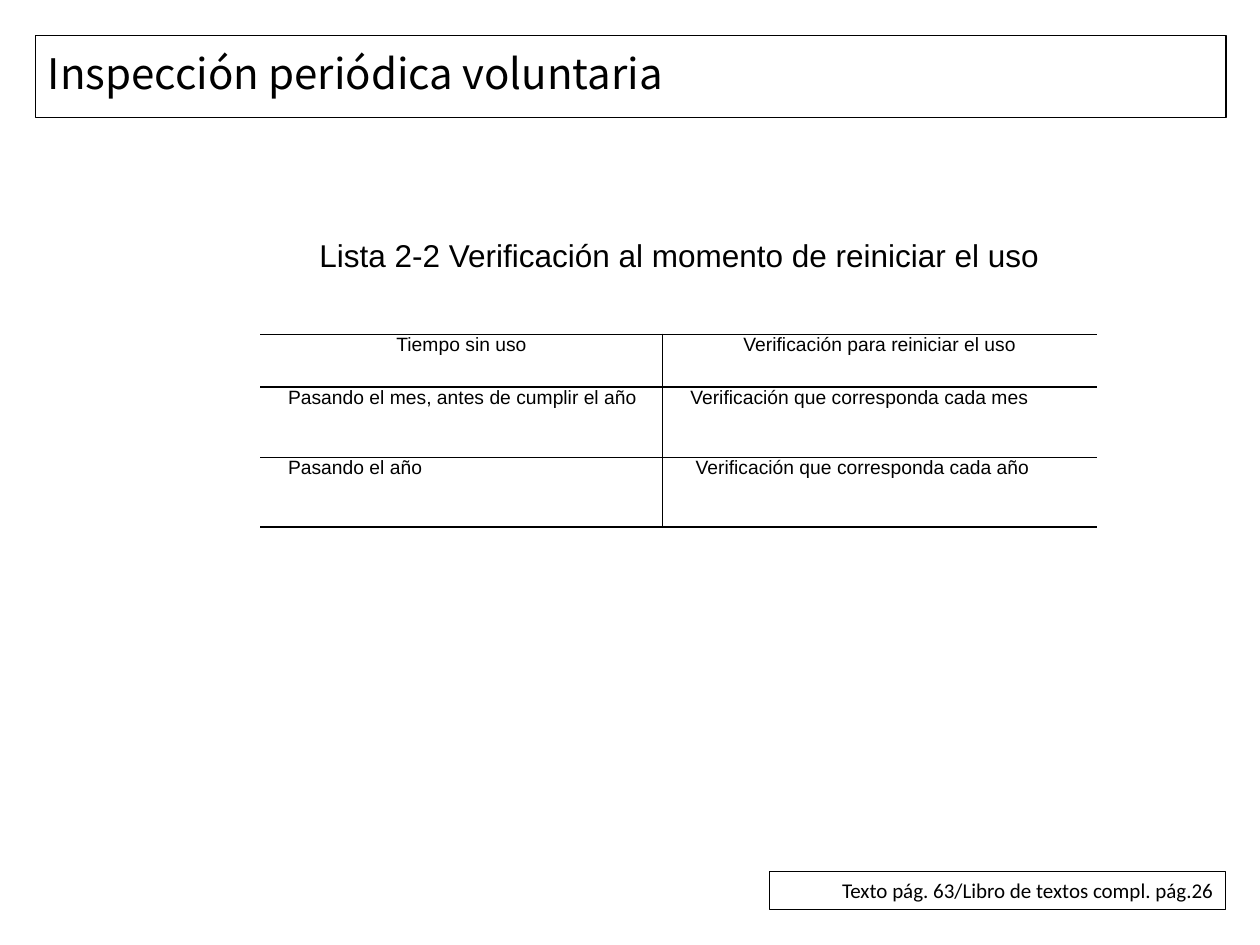
from lxml.etree import SubElement as Sub
from pptx import Presentation
from pptx.dml.color import RGBColor as Rgb
from pptx.enum.shapes import MSO_SHAPE as Shape
from pptx.enum.text import MSO_ANCHOR as Anchor, PP_ALIGN as Align
from pptx.oxml.ns import qn
from pptx.util import Pt

HUES = {"ink": "000000", "page": "FFFFFF"}
CELL = {"name": "Arial", "size": Pt(11)}
ROWS = [
    ("Tiempo sin uso", "Verificación para reiniciar el uso"),
    ("Pasando el mes, antes de cumplir el año", "Verificación que corresponda cada mes"),
    ("Pasando el año", "Verificación que corresponda cada año"),
]
INDENTS = [(0, 0), (10.8, 10.8), (10.8, 13.8)]


def style(item, form):
    for key, value in form.items():
        setattr(item, key, value)


def write(frame, text, font, align=Align.LEFT):
    para = frame.paragraphs[0]
    para.alignment = align
    run = para.add_run()
    run.text = text
    style(run.font, font)
    run.font.color.rgb = Rgb.from_string(HUES["ink"])
    return para


def add_box(slide, box, text, font, align, anchor):
    rect = slide.shapes.add_shape(Shape.RECTANGLE, *map(Pt, box))
    rect.shadow.inherit = False
    rect.fill.background()
    rect.line.color.rgb = Rgb.from_string(HUES["ink"])
    rect.line.width = Pt(0.75)
    style(rect.text_frame, {"word_wrap": True, "vertical_anchor": anchor})
    return write(rect.text_frame, text, font, align)


def add_title(slide, box):
    font = {"name": "Noto Sans CJK JP", "size": Pt(24)}
    para = add_box(slide, box, "Inspección periódica voluntaria", font,
                   Align.LEFT, Anchor.MIDDLE)
    para.line_spacing = 0.9


def add_source(slide, box):
    font = {"name": "Calibri", "size": Pt(12)}
    add_box(slide, box, "Texto pág. 63/Libro de textos compl. pág.26", font,
            Align.RIGHT, Anchor.TOP)


def add_caption(slide, box):
    frame = slide.shapes.add_textbox(*map(Pt, box)).text_frame
    style(frame, {"word_wrap": True, "vertical_anchor": Anchor.MIDDLE})
    write(frame, "Lista 2-2 Verificación al momento de reiniciar el uso",
          {"name": "Arial", "size": Pt(18)}, Align.CENTER)


def set_edges(cell, drawn):
    props = cell._tc.get_or_add_tcPr()
    for side in "LRTB":
        line = Sub(props, qn(f"a:ln{side}"), w=str(Pt(1)))
        if side in drawn:
            fill = Sub(line, qn("a:solidFill"))
            Sub(fill, qn("a:srgbClr"), val=HUES["ink"])
        else:
            Sub(line, qn("a:noFill"))


def add_checks(slide, box, cols, rows):
    table = slide.shapes.add_table(len(rows), len(cols), *map(Pt, box)).table
    style(table, {"first_row": False, "horz_banding": False})
    for col, width in zip(table.columns, cols):
        col.width = Pt(width)
    for r, height in enumerate(rows):
        table.rows[r].height = Pt(height)
        for c, text in enumerate(ROWS[r]):
            cell = table.cell(r, c)
            style(cell, {"margin_left": Pt(5), "margin_right": Pt(5),
                         "margin_top": 0, "margin_bottom": 0})
            set_edges(cell, "LTB" if c else "RTB")
            cell.fill.background()
            para = write(cell.text_frame, text, CELL,
                         Align.LEFT if r else Align.CENTER)
            para._p.get_or_add_pPr().set("marL", str(Pt(INDENTS[r][c])))


def main():
    deck = Presentation()
    style(deck, {"slide_width": Pt(720), "slide_height": Pt(540)})
    slide = deck.slides.add_slide(deck.slide_layouts[6])
    slide.background.fill.solid()
    slide.background.fill.fore_color.rgb = Rgb.from_string(HUES["page"])
    add_caption(slide, (117.4, 131, 541.4, 29))
    add_title(slide, (20.2, 20.2, 680.4, 46.8))
    add_source(slide, (439.9, 498, 260.6, 21.8))
    add_checks(slide, (148.8, 191, 478.1, 110.2),
               (229.9, 248.2), (30.2, 40.3, 39.7))
    deck.save("out.pptx")


if __name__ == "__main__":
    main()
